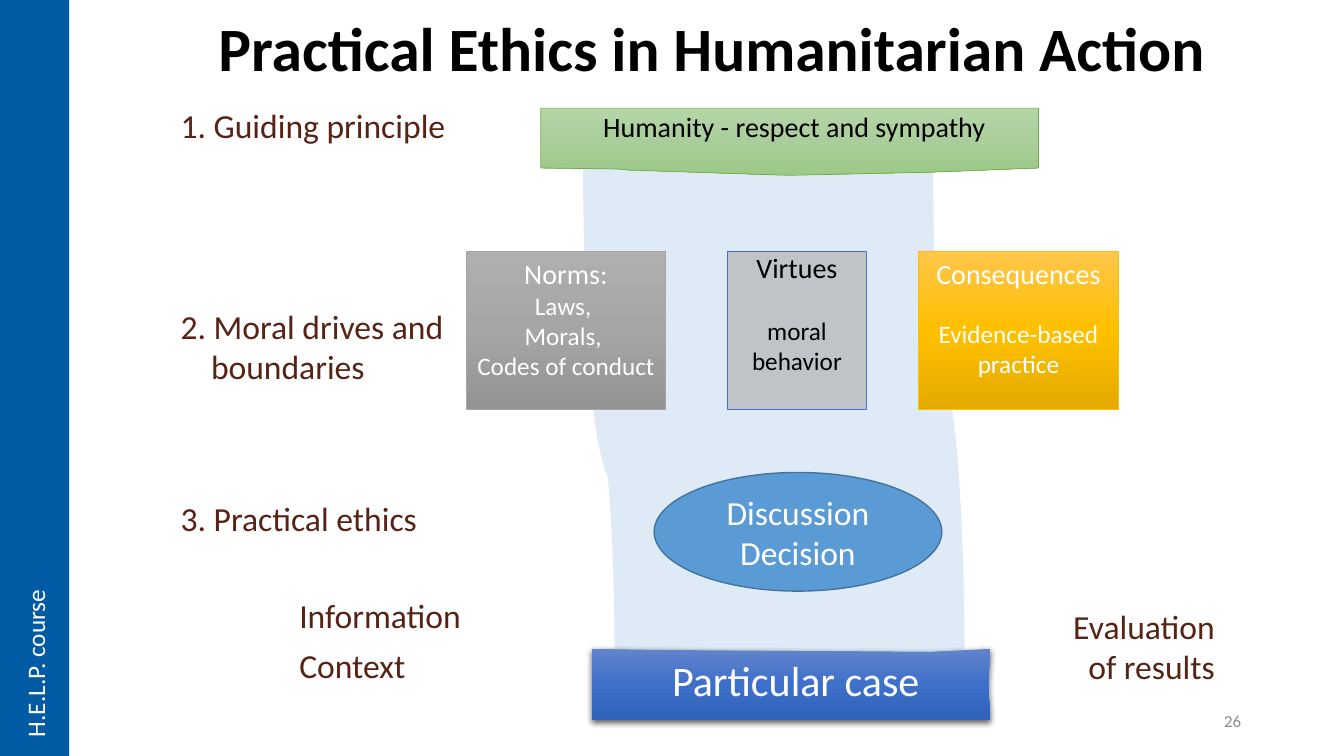
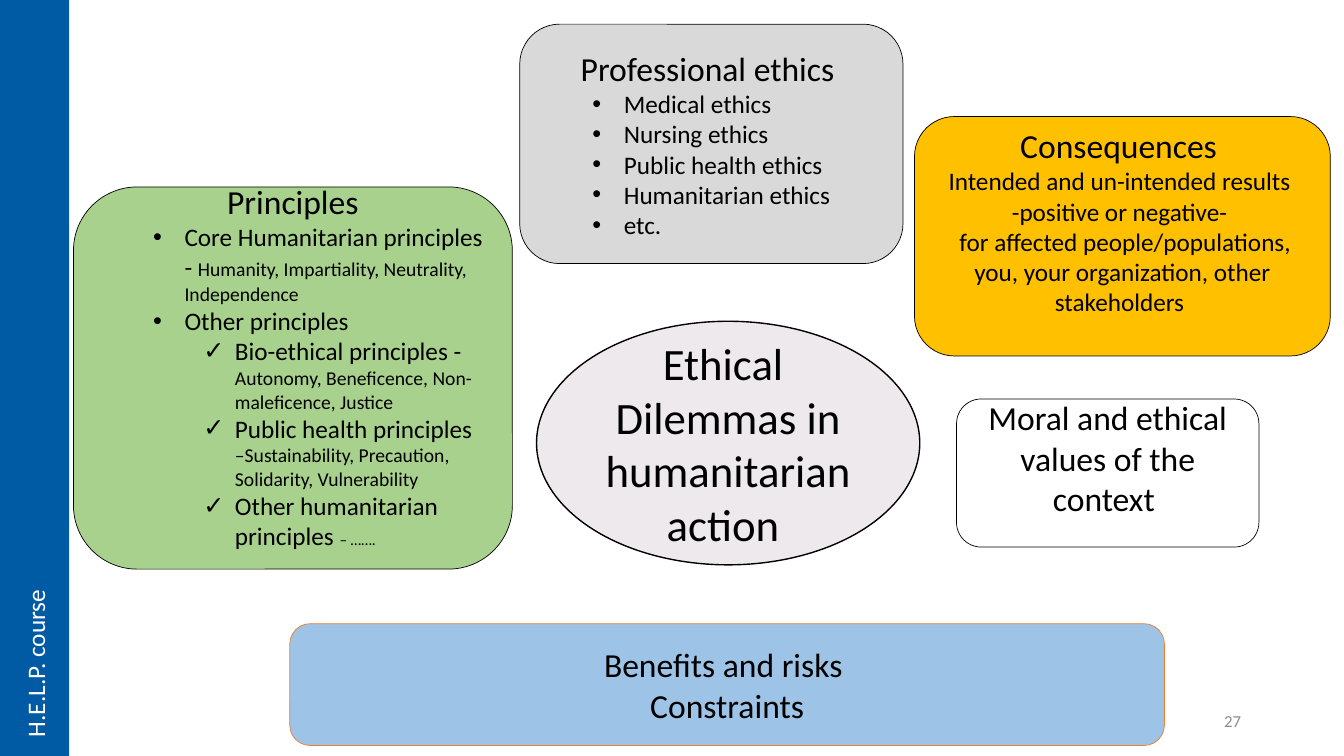
from copy import deepcopy
from dataclasses import dataclass
from lxml.etree import SubElement
from pptx import Presentation
from pptx.dml.color import RGBColor
from pptx.enum.shapes import MSO_CONNECTOR, MSO_SHAPE
from pptx.enum.text import MSO_ANCHOR, PP_ALIGN
from pptx.oxml.ns import qn
from pptx.util import Pt

UNIT = 9525


@dataclass(frozen=True)
class Theme:
    font: str = "Calibri"
    black: str = "000000"
    white: str = "FFFFFF"
    brown: str = "572314"
    grey: str = "8C8C8C"
    bar: str = "005BA4"
    blue: str = "5B9BD5"
    rim: str = "43739E"
    indigo: str = "4472C4"
    green: str = "A9D18E"
    leaf: str = "70AD47"
    gold: str = "FFC000"
    steel: str = "A5A5A5"
    stone: str = "AFABAB"
    silver: str = "D9D9D9"
    lilac: str = "EDE9ED"
    sky: str = "9DC3E6"
    orange: str = "ED7D31"
    greys: tuple = ("AFAFAF", "A5A5A5", "939393")
    golds: tuple = ("FFC64B", "FFC000", "E3AB00")
    blues: tuple = ("6183CB", "3E70CA", "3062BB")
    greens: tuple = ("B5D5A7", "AACE9A", "9CC987")
    title: int = 44
    large: int = 32
    case: int = 30
    head: int = 24
    mid: int = 20
    body: int = 18
    small: int = 14
    page: int = 12
    tiny: int = 11


look = Theme()
left, centre, right = PP_ALIGN.LEFT, PP_ALIGN.CENTER, PP_ALIGN.RIGHT
top, middle = MSO_ANCHOR.TOP, MSO_ANCHOR.MIDDLE


def paint(shape, fill=None, edge=None, width=0.5, pad=(10, 5, 10, 5), anchor=top):
    shape.shadow.inherit = False
    if fill is None:
        shape.fill.background()
    elif isinstance(fill, str):
        shape.fill.solid()
        shape.fill.fore_color.rgb = RGBColor.from_string(fill)
    else:
        shape.fill.gradient()
        shape.fill.gradient_angle = 270
        stops = shape._element.spPr.find(qn("a:gradFill")).find(qn("a:gsLst"))
        stops.insert(1, deepcopy(stops[0]))
        for stop, place, shade in zip(shape.fill.gradient_stops, (0, 0.5, 1), fill):
            stop.position = place
            stop.color.rgb = RGBColor.from_string(shade)
    if edge:
        shape.line.color.rgb = RGBColor.from_string(edge)
        shape.line.width = Pt(width)
    else:
        shape.line.fill.background()
    frame = shape.text_frame
    frame.word_wrap = True
    frame.vertical_anchor = anchor
    frame.margin_left, frame.margin_top, frame.margin_right, frame.margin_bottom = [
        n * UNIT for n in pad]
    return frame


def write(frame, text, size=look.body, color=look.black, align=centre, bold=False,
          level=0, mark=None, inset=0, hang=0, before=0, space=None, join=False):
    para = frame.paragraphs[-1]
    if para.runs and not join:
        para = frame.add_paragraph()
    if not join:
        para.alignment = align
        para.level = level
        para.space_before = Pt(before)
        para.line_spacing = space
        props = para._p.get_or_add_pPr()
        props.set("marL", str(inset * UNIT))
        props.set("indent", str(-hang * UNIT))
        if mark:
            SubElement(props, qn("a:buFont")).set("typeface", "Arial")
            SubElement(props, qn("a:buChar")).set("char", mark)
    run = para.add_run()
    run.text = text
    run.font.name = look.font
    run.font.size = Pt(size)
    run.font.bold = bold
    run.font.color.rgb = RGBColor.from_string(color)


deck = Presentation()
deck.slide_width, deck.slide_height = 1280 * UNIT, 720 * UNIT
slides = [deck.slides.add_slide(deck.slide_layouts[6]) for _ in range(2)]

for page, slide in enumerate(slides, 26):
    spot = [n * UNIT for n in (904, 667, 288, 38)]
    frame = paint(slide.shapes.add_textbox(*spot), anchor=middle)
    write(frame, str(page), size=look.page, color=look.grey, align=right)
    spot = [n * UNIT for n in (0, 0, 66, 720)]
    paint(slide.shapes.add_shape(MSO_SHAPE.RECTANGLE, *spot), look.bar)
    spot = [n * UNIT for n in (9, 555, 48, 152)]
    frame = paint(slide.shapes.add_textbox(*spot))
    frame.word_wrap = False
    frame._txBody.bodyPr.set("vert", "vert270")
    write(frame, "H.E.L.P. course", color=look.white, align=left)

shapes = slides[0].shapes
frame = paint(shapes.add_textbox(*[n * UNIT for n in (198, 12, 1082, 73)]))
write(frame, "Practical Ethics in Humanitarian Action", size=look.title,
      align=left, bold=True, space=0.9)

ends = [n * UNIT for n in (972, 375, 502, 405)]
curve = shapes.add_connector(MSO_CONNECTOR.CURVE, *ends)
curve.line.color.rgb = RGBColor.from_string(look.blue)
curve.line.width = Pt(250)
props = curve._element.spPr
SubElement(props, qn("a:effectLst"))
props.find(qn("a:xfrm")).set("rot", "16200000")
guide = SubElement(props.find(qn("a:prstGeom")).find(qn("a:avLst")), qn("a:gd"))
guide.set("name", "adj1")
guide.set("fmla", "val 52000")
tint = props.find(qn("a:ln")).find(qn("a:solidFill"))[0]
SubElement(tint, qn("a:alpha")).set("val", "20000")

drives = [
    (444, 190, look.greys, look.steel, look.white, 5, "Norms:", 0,
     ["Laws, ", "Morals, ", "Codes of conduct"]),
    (875, 190, look.golds, look.gold, look.white, 5, "Consequences", 20,
     ["Evidence-based practice"]),
    (693, 132, look.stone, look.indigo, look.black, 0, "Virtues", 22,
     ["moral behavior"]),
]
for x, wide, fill, edge, ink, lift, head, gap, lines in drives:
    spot = [n * UNIT for n in (x, 239, wide, 151)]
    shape = shapes.add_shape(MSO_SHAPE.RECTANGLE, *spot)
    frame = paint(shape, fill, edge, pad=(10, lift, 10, 5))
    if fill == look.stone:
        tint = shape._element.spPr.find(qn("a:solidFill"))[0]
        SubElement(tint, qn("a:alpha")).set("val", "62000")
    write(frame, head, size=look.mid, color=ink)
    for line in lines:
        write(frame, line, color=ink, before=gap)

slabs = [
    ("Particular case", look.case, look.white, look.blues, None, None,
     [(564, 618), (623, 619), (886, 621), (943, 618), (941, 651), (943, 686),
      (564, 686), (564, 649)]),
    ("Humanity - respect and sympathy", look.mid, look.black, look.greens, look.leaf, 0.9,
     [(515, 103), (989, 103), (989, 160), (887, 164), (751, 167), (599, 162),
      (590, 161), (515, 160)]),
]
for text, size, ink, fill, edge, space, dots in slabs:
    pen = shapes.build_freeform(*dots[0], scale=UNIT)
    pen.add_line_segments(dots[1:], close=True)
    shape = pen.convert_to_shape()
    frame = paint(shape, fill, edge)
    write(frame, text, size=size, color=ink, inset=9, space=space)
    if edge is None:
        glow = SubElement(shape._element.spPr.find(qn("a:effectLst")), qn("a:outerShdw"))
        for key, val in (("blurRad", 57150), ("dist", 19050), ("dir", 5400000),
                         ("algn", "ctr"), ("rotWithShape", 0)):
            glow.set(key, str(val))
        tint = SubElement(glow, qn("a:srgbClr"))
        tint.set("val", look.black)
        SubElement(tint, qn("a:alpha")).set("val", "63000")

labels = [
    ("1. Guiding principle", (164, 100, 274, 38), left, 0),
    ("2. Moral drives and boundaries", (164, 291, 354, 78), left, 29),
    ("3. Practical ethics", (164, 474, 372, 38), left, 0),
    ("Context", (277, 614, 265, 38), left, 0),
    ("Information", (277, 567, 212, 38), left, 0),
    ("Evaluation of results", (995, 577, 170, 78), right, 0),
]
for text, spot, align, hang in labels:
    box = shapes.add_textbox(*[n * UNIT for n in spot])
    write(paint(box, pad=(8, 0, 8, 0)), text, size=look.head, color=look.brown,
          align=align, inset=hang, hang=hang)

spot = [n * UNIT for n in (623, 450, 274, 113)]
frame = paint(shapes.add_shape(MSO_SHAPE.OVAL, *spot), look.blue, look.rim, 1, anchor=middle)
for word in ("Discussion", "Decision"):
    write(frame, word, size=look.head, color=look.white)

dot = dict(level=1, mark="•", inset=78, hang=30, align=left)
tick = dict(level=2, mark="✓", inset=126, hang=30, align=left)
head = dict(size=look.head)
large = dict(size=look.large)
small = dict(size=look.small, join=True)
tiny = dict(size=look.tiny, join=True)
oval, round_box = MSO_SHAPE.OVAL, MSO_SHAPE.ROUNDED_RECTANGLE
topics = [
    (oval, (511, 306, 365, 232), look.lilac, look.black, 1, 5, [
        ("Ethical ", large),
        ("Dilemmas in humanitarian action ", large)]),
    (round_box, (871, 111, 396, 228), look.gold, look.black, 0.5, 34, [
        ("Consequences ", head),
        ("Intended and un-intended results ", {}),
        ("-positive or negative- ", {}),
        (" for affected people/populations, you, your organization, other stakeholders ", {})]),
    (round_box, (70, 178, 418, 364), look.green, look.black, 0.5, 28, [
        ("Principles", head),
        ("Core Humanitarian principles - ", dot),
        ("Humanity, Impartiality, Neutrality, Independence", small),
        ("Other principles", dot),
        ("Bio-ethical principles - ", tick),
        ("Autonomy, Beneficence, Non-maleficence, Justice", small),
        ("Public health principles ", tick),
        ("–Sustainability, Precaution, Solidarity, Vulnerability", small),
        ("Other humanitarian principles ", tick),
        ("– …….", tiny)]),
    (round_box, (495, 23, 365, 228), look.silver, look.black, 0.5, 5, [
        ("Professional ethics ", head),
        ("Medical ethics", dot),
        ("Nursing ethics", dot),
        ("Public health ethics", dot),
        ("Humanitarian ethics", dot),
        ("etc.", dot)]),
    (round_box, (911, 380, 288, 141), look.white, look.black, 0.5, 34, [
        ("Moral and ethical values of the context ", head)]),
    (round_box, (276, 594, 833, 116), look.sky, look.orange, 0.5, 5, [
        ("Benefits and risks ", head),
        ("Constraints", head)]),
]
for kind, spot, fill, edge, width, base, rows in topics:
    shape = slides[1].shapes.add_shape(kind, *[n * UNIT for n in spot])
    frame = paint(shape, fill, edge, width, (10, 5, 10, base), middle)
    for text, style in rows:
        write(frame, text, **style)

deck.save("out.pptx")
